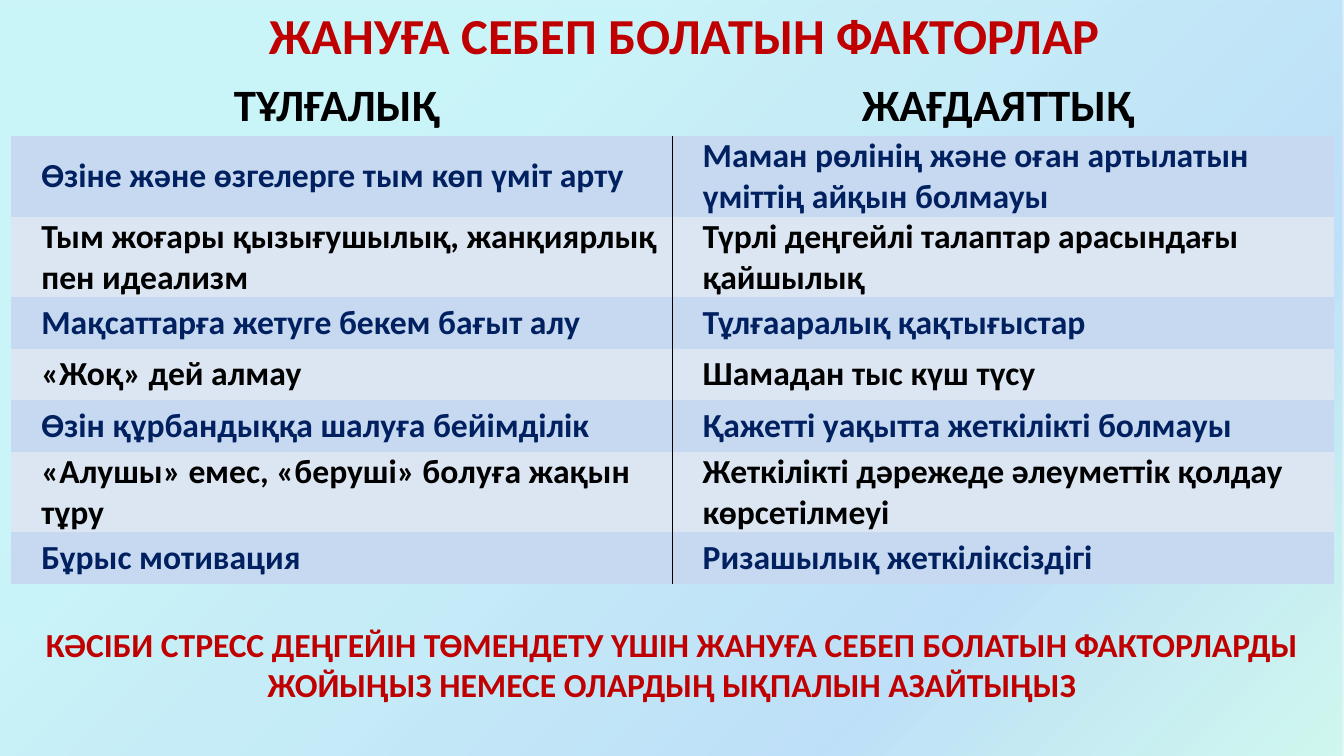
from lxml.etree import SubElement
from pptx import Presentation
from pptx.dml.color import RGBColor
from pptx.enum.shapes import MSO_SHAPE
from pptx.enum.text import MSO_ANCHOR, MSO_AUTO_SIZE, PP_ALIGN
from pptx.oxml import parse_xml
from pptx.oxml.ns import nsdecls, qn
from pptx.util import Inches, Pt

COLORS = {"red": "C00000", "navy": "002060", "black": "000000",
          "dark_band": "C6D9F1", "light_band": "DCE6F2"}
BACKDROP_STOPS = [(25, "21D6E0", 23), (75, "0087E6", 25),
                  (100, "03D4A8", 18), (100, "005CBF", 26)]
NO_GRID_STYLE = "{2D5ABB26-0587-4C30-8999-92F81FD0307C}"

TITLE = "ЖАНУҒА СЕБЕП БОЛАТЫН ФАКТОРЛАР"
HEADINGS = ("ТҰЛҒАЛЫҚ ", "ЖАҒДАЯТТЫҚ ")
FACTORS = [
    ("Өзіне және өзгелерге тым көп үміт арту",
     "Маман рөлінің және оған артылатын үміттің айқын болмауы"),
    ("Тым жоғары қызығушылық, жанқиярлық пен идеализм",
     "Түрлі деңгейлі талаптар арасындағы қайшылық"),
    ("Мақсаттарға жетуге бекем бағыт алу", "Тұлғааралық қақтығыстар"),
    ("«Жоқ» дей алмау", "Шамадан тыс күш түсу"),
    ("Өзін құрбандыққа шалуға бейімділік", "Қажетті уақытта жеткілікті болмауы"),
    ("«Алушы» емес, «беруші» болуға жақын тұру",
     "Жеткілікті дәрежеде әлеуметтік қолдау көрсетілмеуі"),
    ("Бұрыс мотивация", "Ризашылық жеткіліксіздігі"),
]
ROW_HEIGHTS = [0.59, 0.65, 0.65, 0.51, 0.51, 0.51, 0.65, 0.51]
ADVICE = ("КӘСІБИ СТРЕСС ДЕҢГЕЙІН ТӨМЕНДЕТУ ҮШІН ЖАНУҒА СЕБЕП БОЛАТЫН ФАКТОРЛАРДЫ "
          "ЖОЙЫҢЫЗ НЕМЕСЕ ОЛАРДЫҢ ЫҚПАЛЫН АЗАЙТЫҢЫЗ")


def write_text(frame, text, size=24, color="black", align=PP_ALIGN.CENTER,
               indent=0, line_spacing=None):
    """Write one bold paragraph into a text frame."""
    frame.word_wrap = True
    para = frame.paragraphs[0]
    para.alignment = align
    if line_spacing:
        para.line_spacing = line_spacing
    if indent:
        properties = para._p.get_or_add_pPr()
        properties.set("marL", str(Inches(indent)))
        properties.set("indent", "0")
    span = para.add_run()
    span.text = text
    span.font.name = "Calibri"
    span.font.size = Pt(size)
    span.font.bold = True
    span.font.color.rgb = RGBColor.from_string(COLORS[color])


def add_backdrop(page, left, top, width, height):
    """Lay a translucent diagonal gradient behind everything."""
    panel = page.shapes.add_shape(MSO_SHAPE.RECTANGLE, Inches(left), Inches(top),
                                  Inches(width), Inches(height))
    panel.shadow.inherit = False
    panel.line.fill.background()
    stops = "".join(
        f'<a:gs pos="{position * 1000}"><a:srgbClr val="{color}">'
        f'<a:alpha val="{alpha * 1000}"/></a:srgbClr></a:gs>'
        for position, color, alpha in BACKDROP_STOPS)
    gradient = parse_xml(f'<a:gradFill {nsdecls("a")} rotWithShape="1"><a:gsLst>{stops}'
                         '</a:gsLst><a:lin ang="2700000" scaled="0"/></a:gradFill>')
    panel._element.spPr.find(qn("a:prstGeom")).addnext(gradient)
    page.shapes._spTree.insert(2, panel._element)


def place_title(page, left, top, width, height):
    """Move and format the title placeholder."""
    title = page.shapes.title
    title.left, title.top = Inches(left), Inches(top)
    title.width, title.height = Inches(width), Inches(height)
    frame = title.text_frame
    frame.vertical_anchor = MSO_ANCHOR.TOP
    frame.auto_size = MSO_AUTO_SIZE.SHAPE_TO_FIT_TEXT
    write_text(frame, TITLE, size=36, color="red", line_spacing=Pt(30))


def add_border(cell, side):
    """Draw a thin black line on one side of a cell."""
    line = parse_xml(f'<a:{side} {nsdecls("a")} w="{Pt(1)}"><a:solidFill>'
                     f'<a:srgbClr val="{COLORS["black"]}"/></a:solidFill></a:{side}>')
    cell._tc.get_or_add_tcPr().insert(0, line)


def add_factor_table(page, left, top, width):
    """Build the two-column table of factors with banded rows."""
    rows = [HEADINGS] + FACTORS
    table = page.shapes.add_table(len(rows), 2, Inches(left), Inches(top), Inches(width),
                                  Inches(sum(ROW_HEIGHTS))).table
    table.first_row = table.horz_banding = False
    properties = table._tbl.tblPr
    for style in properties.findall(qn("a:tableStyleId")):
        properties.remove(style)
    SubElement(properties, qn("a:tableStyleId")).text = NO_GRID_STYLE
    for column in table.columns:
        column.width = Inches(width / 2)
    for row_index, texts in enumerate(rows):
        table.rows[row_index].height = Inches(ROW_HEIGHTS[row_index])
        odd = row_index % 2 == 1
        for column_index, text in enumerate(texts):
            cell = table.cell(row_index, column_index)
            cell.vertical_anchor = MSO_ANCHOR.MIDDLE
            cell.margin_left = cell.margin_right = Inches(0.1)
            cell.margin_top = cell.margin_bottom = 0
            if row_index == 0:
                cell.fill.background()
                write_text(cell.text_frame, text, size=32)
                continue
            cell.fill.solid()
            band = "dark_band" if odd else "light_band"
            cell.fill.fore_color.rgb = RGBColor.from_string(COLORS[band])
            add_border(cell, "lnL" if column_index else "lnR")
            write_text(cell.text_frame, text, color="navy" if odd else "black",
                       align=PP_ALIGN.LEFT, indent=0.2)


def add_advice(page, left, top, width, height):
    """Add the closing advice under the table."""
    box = page.shapes.add_textbox(Inches(left), Inches(top), Inches(width), Inches(height))
    box.text_frame.auto_size = MSO_AUTO_SIZE.SHAPE_TO_FIT_TEXT
    write_text(box.text_frame, ADVICE, color="red")


def main():
    """Build the slide and save the deck."""
    deck = Presentation()
    deck.slide_width, deck.slide_height = Inches(13.33), Inches(7.5)
    page = deck.slides.add_slide(deck.slide_layouts[5])
    add_backdrop(page, 0, 0, 13.33, 7.5)
    place_title(page, 1.03, 0.17, 11.53, 0.52)
    add_factor_table(page, 0.11, 0.76, 13.12)
    add_advice(page, 0, 6.14, 13.33, 0.91)
    deck.save("out.pptx")


if __name__ == "__main__":
    main()
